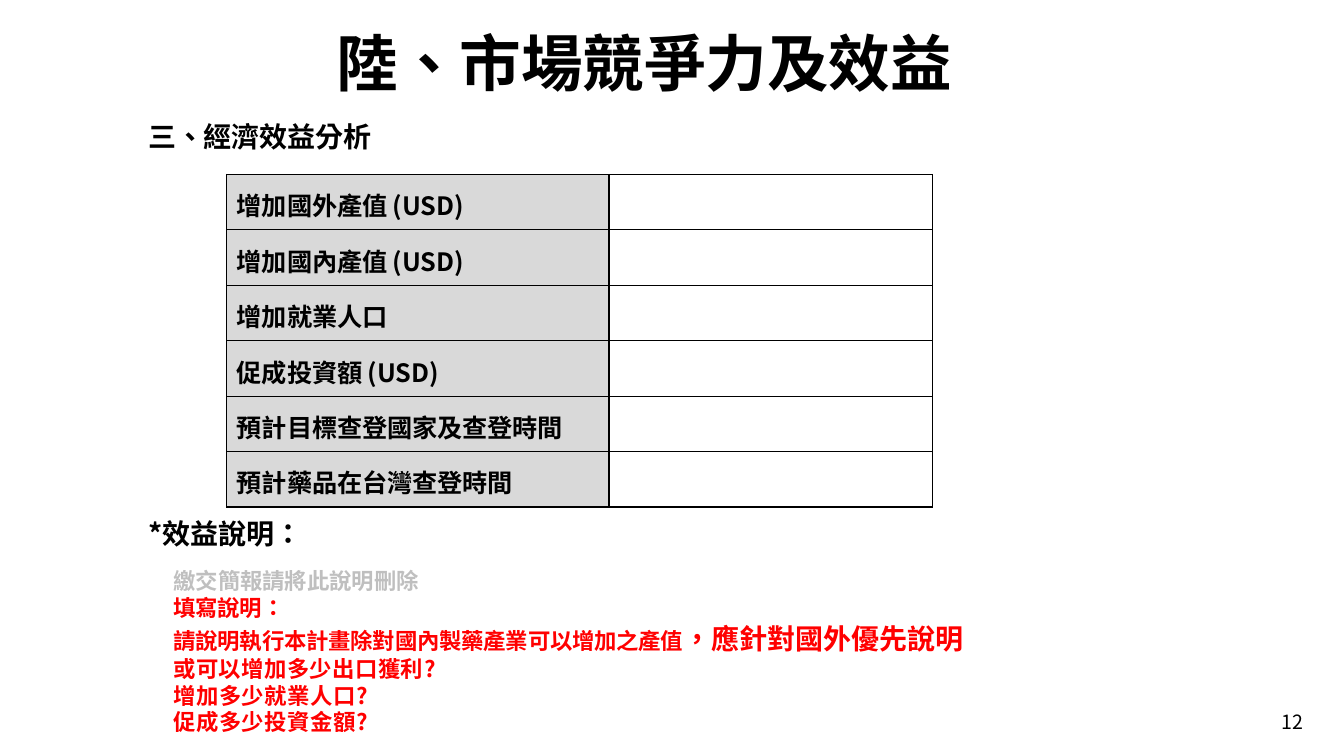
from lxml import etree
from pptx import Presentation
from pptx.dml.color import RGBColor
from pptx.enum import text as t
from pptx.oxml import ns
from pptx.util import Inches, Pt

BLACK = RGBColor(0x00, 0x00, 0x00)
WHITE = RGBColor(0xFF, 0xFF, 0xFF)
RED = RGBColor(0xFF, 0x00, 0x00)
LABEL_GRAY = RGBColor(0xD9, 0xD9, 0xD9)
HINT_GRAY = RGBColor(0xBF, 0xBF, 0xBF)
NOTO = "Noto Sans CJK SC"

BENEFITS = [
    "增加國外產值 (USD)",
    "增加國內產值 (USD)",
    "增加就業人口",
    "促成投資額 (USD)",
    "預計目標查登國家及查登時間",
    "預計藥品在台灣查登時間",
]
INSTRUCTIONS = [
    [("繳交簡報請將此說明刪除", 16, HINT_GRAY, "Calibri", 0)],
    [("填寫說明：", 16, RED, NOTO, -0.1)],
    [("請說明執行本計畫除對國內製藥產業可以增加之產值", 16, RED, NOTO, -0.1),
     ("，應針對國外優先說明", 20, RED, NOTO, -0.1)],
    [("或可以增加多少出口獲利?", 16, RED, NOTO, 0.3)],
    [("增加多少就業人口?", 16, RED, NOTO, 0.4)],
    [("促成多少投資金額?", 16, RED, NOTO, 0.4)],
]


def style_run(run, size, color=BLACK, face=NOTO, spacing=-0.1, bold=True):
    font = run.font
    font.size, font.bold, font.name = Pt(size), bold, face
    font.color.rgb = color
    properties = run._r.get_or_add_rPr()
    properties.set("lang", "zh-TW")
    properties.set("spc", str(round(spacing * 100)))
    east_asian = etree.Element(ns.qn("a:ea"), typeface=NOTO)
    properties.find(ns.qn("a:latin")).addnext(east_asian)


def prepare_frame(frame, top_inset, anchor):
    frame.word_wrap = True
    frame.auto_size = t.MSO_AUTO_SIZE.NONE
    frame.vertical_anchor = anchor
    frame.margin_left = frame.margin_right = frame.margin_bottom = 0
    frame.margin_top = Inches(top_inset)


def add_box(slide, left, top, width, height, top_inset=0.01,
            anchor=t.MSO_ANCHOR.MIDDLE):
    box = slide.shapes.add_textbox(
        Inches(left), Inches(top), Inches(width), Inches(height))
    prepare_frame(box.text_frame, top_inset, anchor)
    return box.text_frame


def add_line(slide, words, left, top, width, height, size, **style):
    frame = add_box(slide, left, top, width, height)
    frame.text = words
    style_run(frame.paragraphs[0].runs[0], size, **style)


def set_title(slide, words):
    title = slide.shapes.title
    title.left, title.top = Inches(3.34), Inches(0.23)
    title.width, title.height = Inches(7.14), Inches(0.75)
    prepare_frame(title.text_frame, 0.01, t.MSO_ANCHOR.MIDDLE)
    title.text_frame.text = words
    heading = title.text_frame.paragraphs[0]
    heading.alignment = t.PP_ALIGN.LEFT
    heading.space_before = Pt(0)
    style_run(heading.runs[0], 44)


def border_cell(cell):
    properties = cell._tc.get_or_add_tcPr()
    for position, side in enumerate(("lnL", "lnR", "lnT", "lnB")):
        border = etree.Element(ns.qn(f"a:{side}"), w=str(Pt(1)))
        fill = etree.SubElement(border, ns.qn("a:solidFill"))
        etree.SubElement(fill, ns.qn("a:srgbClr"), val=str(BLACK))
        properties.insert(position, border)


def add_benefit_table(slide):
    table = slide.shapes.add_table(
        len(BENEFITS), 2, Inches(2.25), Inches(1.73),
        Inches(7), Inches(0.55 * len(BENEFITS))).table
    table.first_row = table.horz_banding = False
    table.columns[0].width = Inches(3.79)
    table.columns[1].width = Inches(3.21)
    for row, benefit in zip(table.rows, BENEFITS):
        for cell, color in zip(row.cells, (LABEL_GRAY, WHITE)):
            cell.fill.solid()
            cell.fill.fore_color.rgb = color
            cell.margin_right = cell.margin_bottom = 0
            cell.margin_left, cell.margin_top = Inches(0.1), Inches(0.12)
            border_cell(cell)
        label = row.cells[0].text_frame
        label.text = benefit
        style_run(label.paragraphs[0].runs[0], 18)


def add_instructions(slide):
    frame = add_box(slide, 1.72, 5.43, 8.07, 1.86, 0.2, t.MSO_ANCHOR.TOP)
    for index, parts in enumerate(INSTRUCTIONS):
        line = frame.add_paragraph() if index else frame.paragraphs[0]
        line.line_spacing = Pt(1.2 * max(size for _, size, *_ in parts))
        for words, *style in parts:
            run = line.add_run()
            run.text = words
            style_run(run, *style)


def main():
    deck = Presentation()
    deck.slide_width, deck.slide_height = Inches(13.33), Inches(7.5)
    slide = deck.slides.add_slide(deck.slide_layouts[5])
    set_title(slide, "陸、市場競爭力及效益")
    add_line(slide, "三、經濟效益分析", 1.47, 1.17, 2.53, 0.35, 20)
    add_benefit_table(slide)
    add_line(slide, "*效益說明：", 1.47, 5.11, 2.53, 0.35, 20)
    add_instructions(slide)
    add_line(slide, "12", 12.71, 7.01, 0.29, 0.29, 14, spacing=-0.2, bold=False)
    deck.save("out.pptx")


if __name__ == "__main__":
    main()
